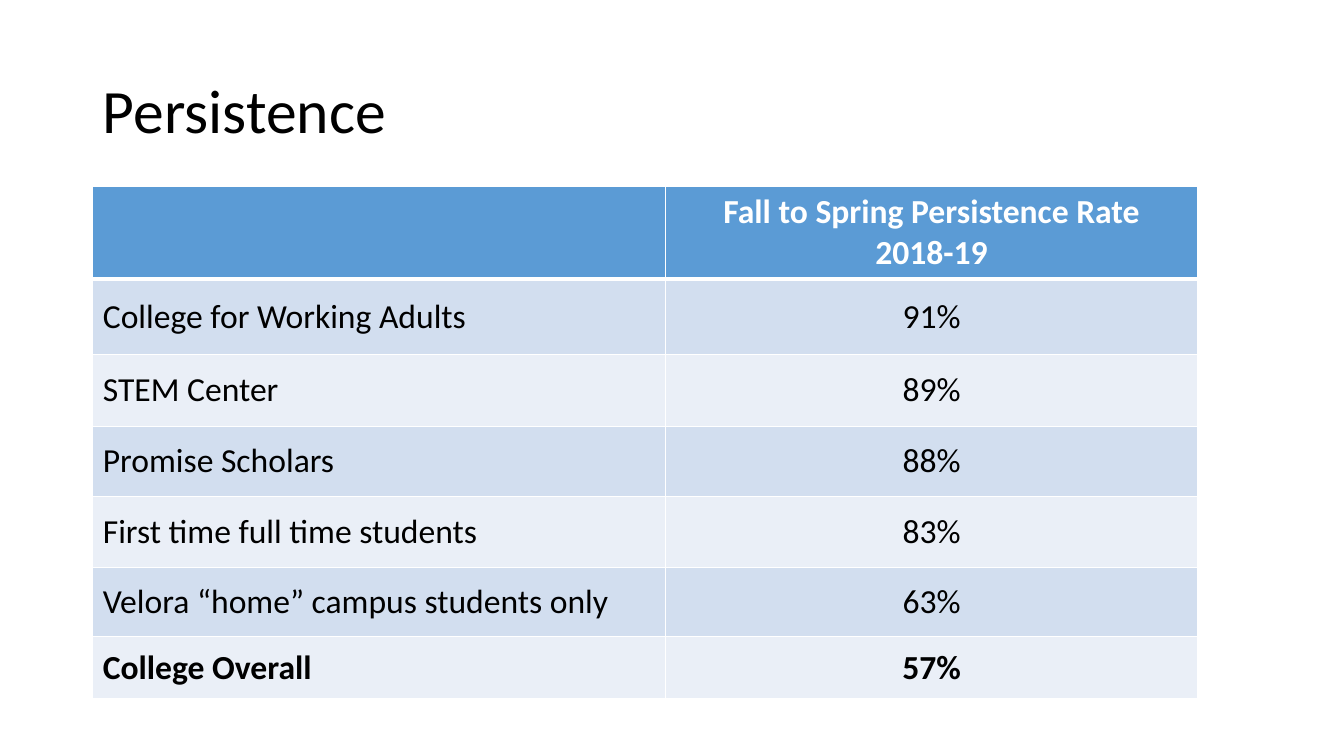
from dataclasses import dataclass
from pptx import Presentation
from pptx import util as u
from pptx.dml import color
from pptx.enum import text
from pptx.oxml import ns
from lxml import etree


@dataclass(frozen=True)
class Theme:
    font: str = "Calibri"
    ink: str = "000000"
    white: str = "FFFFFF"
    head: str = "5B9BD5"
    bands: tuple = ("D2DEEF", "EAEFF7")
    title: int = 44
    body: int = 24
    thin: int = 1
    thick: int = 3


THEME = Theme()
ROWS = [
    ("", "Fall to Spring Persistence Rate\n2018-19"),
    ("College for Working Adults", "91%"),
    ("STEM Center", "89%"),
    ("Promise Scholars", "88%"),
    ("First time full time students", "83%"),
    ("Velora “home” campus students only", "63%"),
    ("College Overall", "57%"),
]
WIDTHS = (5.68, 5.28)
HEIGHTS = (0.92, 0.75, 0.71, 0.7, 0.7, 0.69, 0.61)


def style(frame, size, ink, bold, align):
    for para in frame.paragraphs:
        para.alignment = align
        font = para.font
        font.name, font.size, font.bold = THEME.font, u.Pt(size), bold
        font.color.rgb = color.RGBColor.from_string(ink)


def edge(cell, side, width):
    props = cell._tc.get_or_add_tcPr()
    line = etree.SubElement(props, ns.qn(f"a:ln{side}"), w=str(u.Pt(width)))
    fill = etree.SubElement(line, ns.qn("a:solidFill"))
    etree.SubElement(fill, ns.qn("a:srgbClr"), val=THEME.white)


def add_title(slide, words, left, top, width, height):
    title = slide.shapes.title
    title.left, title.top = u.Inches(left), u.Inches(top)
    title.width, title.height = u.Inches(width), u.Inches(height)
    frame = title.text_frame
    frame.text = words
    frame.auto_size = text.MSO_AUTO_SIZE.NONE
    frame.vertical_anchor = text.MSO_ANCHOR.MIDDLE
    frame.paragraphs[0].line_spacing = 0.9
    style(frame, THEME.title, THEME.ink, False, text.PP_ALIGN.LEFT)


def add_rates(slide, left, top, width, height):
    table = slide.shapes.add_table(
        len(ROWS), len(WIDTHS), u.Inches(left), u.Inches(top),
        u.Inches(width), u.Inches(height)).table
    for col, size in zip(table.columns, WIDTHS):
        col.width = u.Inches(width * size / sum(WIDTHS))
    for row, size in zip(table.rows, HEIGHTS):
        row.height = u.Inches(height * size / sum(HEIGHTS))
    for r, row in enumerate(ROWS):
        head = r == 0
        shade = THEME.head if head else THEME.bands[(r - 1) % 2]
        ink = THEME.white if head else THEME.ink
        bold = head or r == len(ROWS) - 1
        for c, words in enumerate(row):
            cell = table.cell(r, c)
            cell.text = words
            cell.vertical_anchor = text.MSO_ANCHOR.MIDDLE
            align = text.PP_ALIGN.CENTER if c else text.PP_ALIGN.LEFT
            style(cell.text_frame, THEME.body, ink, bold, align)
            for side in "LRTB":
                rule = (r, side) in ((0, "B"), (1, "T"))
                edge(cell, side, THEME.thick if rule else THEME.thin)
            cell.fill.solid()
            cell.fill.fore_color.rgb = color.RGBColor.from_string(shade)


def main():
    deck = Presentation()
    deck.slide_width, deck.slide_height = u.Inches(13.33), u.Inches(7.5)
    slide = deck.slides.add_slide(deck.slide_layouts[5])
    add_title(slide, "Persistence", 0.92, 0.4, 11.5, 1.45)
    add_rates(slide, 0.92, 1.85, 10.96, 5.08)
    deck.save("out.pptx")


if __name__ == "__main__":
    main()
